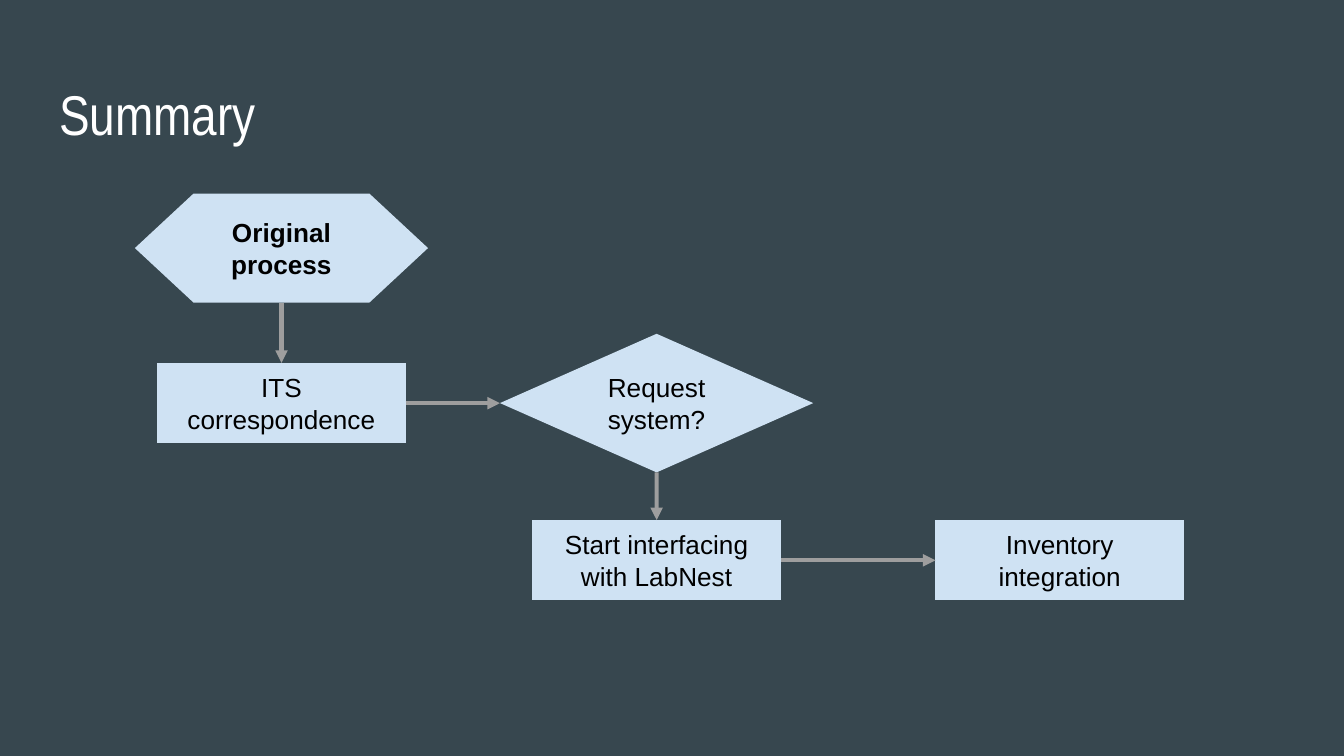
from lxml import etree
from pptx import Presentation
from pptx.dml.color import RGBColor
from pptx.enum.shapes import MSO_CONNECTOR, MSO_SHAPE
from pptx.enum.text import MSO_ANCHOR, PP_ALIGN
from pptx.oxml.ns import qn
from pptx.util import Cm, Pt

STEP = MSO_SHAPE.FLOWCHART_PROCESS
START = MSO_SHAPE.FLOWCHART_PREPARATION
CHOICE = MSO_SHAPE.FLOWCHART_DECISION
LINE = MSO_CONNECTOR.STRAIGHT
TOP, MIDDLE = MSO_ANCHOR.TOP, MSO_ANCHOR.MIDDLE
LEFT, CENTER = PP_ALIGN.LEFT, PP_ALIGN.CENTER

rgb = RGBColor.from_string


def write(shape, text, size=14, font="Arial", color="000000", bold=False,
          align=CENTER, anchor=MIDDLE):
    frame = shape.text_frame
    frame.word_wrap = True
    frame.vertical_anchor = anchor
    frame.margin_left = frame.margin_right = Cm(0.25)
    frame.margin_top = frame.margin_bottom = Cm(0.25)
    para = frame.paragraphs[0]
    para.alignment = align
    run = para.add_run()
    run.text = text
    run.font.size = Pt(size)
    run.font.name = font
    run.font.bold = bold
    run.font.color.rgb = rgb(color)


deck = Presentation()
deck.slide_width, deck.slide_height = Cm(25.4), Cm(14.29)
slide = deck.slides.add_slide(deck.slide_layouts[6])
slide.background.fill.solid()
slide.background.fill.fore_color.rgb = rgb("37474F")

title = slide.shapes.add_textbox(Cm(0.87), Cm(1.25), Cm(23.67), Cm(1.6))
write(title, "Summary", size=30, font="Arial Narrow", color="FFFFFF",
      align=LEFT, anchor=TOP)

# Each node is centred on a column and a row of the flow
cols = [5.32, 12.41, 20.03]
rows = [4.69, 7.62, 10.59]
sizes = {STEP: (4.7, 1.52), START: (5.54, 2.06), CHOICE: (5.92, 2.62)}
nodes = [
    ("Original process", START, 0, 0),
    ("ITS correspondence", STEP, 0, 1),
    ("Request system?", CHOICE, 1, 1),
    ("Start interfacing with LabNest", STEP, 1, 2),
    ("Inventory integration", STEP, 2, 2),
]
boxes = []
for text, kind, col, row in nodes:
    wide, high = sizes[kind]
    box = slide.shapes.add_shape(kind, Cm(cols[col] - wide / 2),
                                 Cm(rows[row] - high / 2), Cm(wide), Cm(high))
    box.shadow.inherit = False
    box.fill.solid()
    box.fill.fore_color.rgb = rgb("CFE2F3")
    box.line.fill.background()
    write(box, text, bold=kind == START)
    boxes.append(box)

# Connection sites: 0 top, 1 left, 2 bottom, 3 right
for i, (source, target) in enumerate(zip(boxes, boxes[1:])):
    down = nodes[i][2] == nodes[i + 1][2]
    arrow = slide.shapes.add_connector(LINE, 0, 0, 0, 0)
    arrow.begin_connect(source, 2 if down else 3)
    arrow.end_connect(target, 0 if down else 1)
    arrow.line.width = Pt(2.25)
    arrow.line.color.rgb = rgb("9E9E9E")
    etree.SubElement(arrow.line._get_or_add_ln(), qn("a:tailEnd"), type="triangle")
    etree.SubElement(arrow._element.spPr, qn("a:effectLst"))

deck.save("out.pptx")
